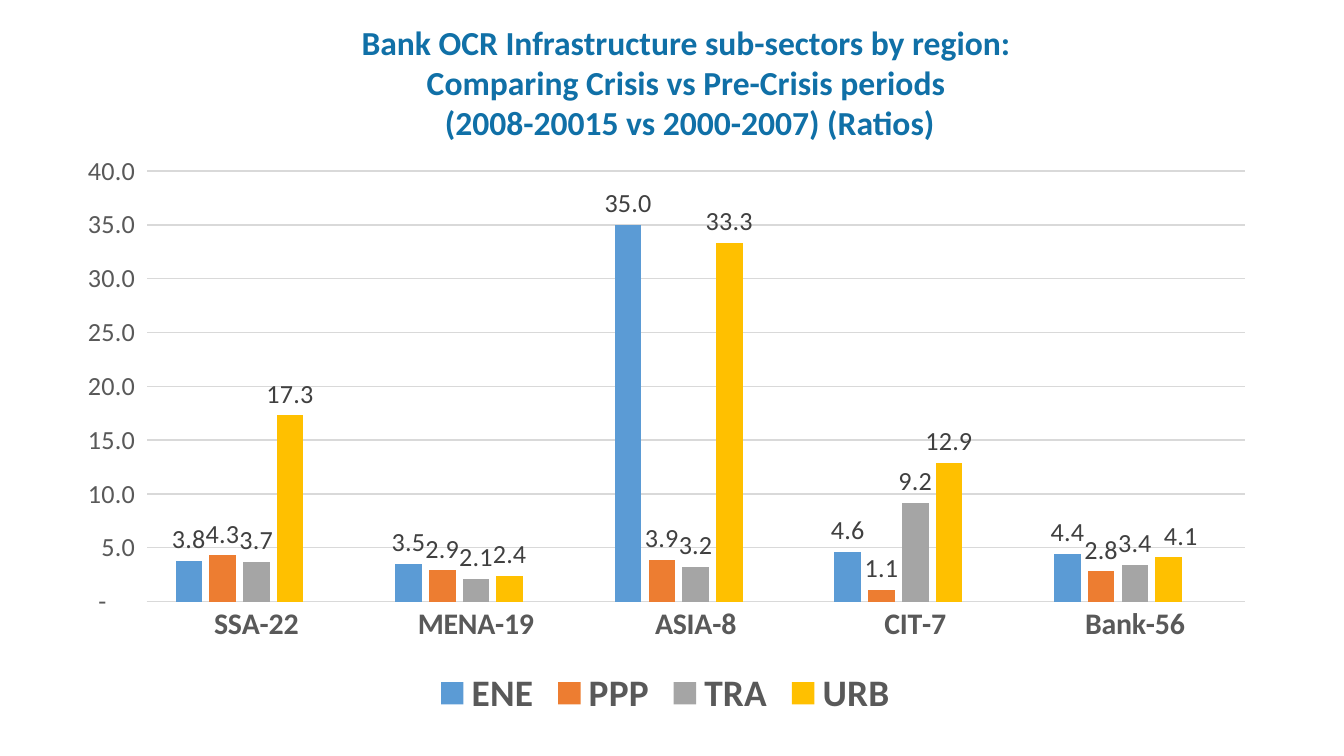
"""Build a slide comparing infrastructure sub-sector ratios by region."""
from lxml.etree import SubElement
from pptx import Presentation
from pptx.chart.data import CategoryChartData
from pptx.dml.color import RGBColor
from pptx.enum.chart import XL_CHART_TYPE, XL_LABEL_POSITION, XL_LEGEND_POSITION, XL_TICK_MARK
from pptx.enum.text import MSO_AUTO_SIZE, PP_ALIGN
from pptx.oxml import parse_xml
from pptx.oxml.ns import nsdecls, qn
from pptx.util import Pt

PX = 914400 / 134.4
FONT = "Calibri"
TITLE_BLUE = RGBColor(0x10, 0x70, 0xA7)
AXIS_GREY = RGBColor(0x59, 0x59, 0x59)
LABEL_GREY = RGBColor(0x40, 0x40, 0x40)
GRID_GREY = RGBColor(0xD9, 0xD9, 0xD9)
RATIO_FORMAT = '_-* #,##0.0_-;\\-* #,##0.0_-;_-* "-"??_-;'

REGIONS = ["SSA-22", "MENA-19", "ASIA-8", "CIT-7", "Bank-56"]
SECTORS = [
    ("ENE", [3.8, 3.5, 35, 4.6, 4.4], RGBColor(0x5B, 0x9B, 0xD5)),
    ("PPP", [4.3, 2.9, 3.9, 1.1, 2.8], RGBColor(0xED, 0x7D, 0x31)),
    ("TRA", [3.7, 2.1, 3.2, 9.2, 3.4], RGBColor(0xA5, 0xA5, 0xA5)),
    ("URB", [17.3, 2.4, 33.3, 12.9, 4.1], RGBColor(0xFF, 0xC0, 0x00)),
    ("Series 5", [None] * 5, RGBColor(0x44, 0x72, 0xC4)),
]
TITLE_LINES = [
    "Bank OCR Infrastructure sub-sectors by region: ",
    "Comparing Crisis vs Pre-Crisis periods ",
    "(2008-20015 vs 2000-2007) (Ratios)",
]


def px(*lengths):
    return [round(length * PX) for length in lengths]


def style(font, size, color, bold=False):
    font.name = FONT
    font.size = Pt(size)
    font.bold = bold
    font.color.rgb = color


presentation = Presentation()
presentation.slide_width, presentation.slide_height = px(1344, 756)
slide = presentation.slides.add_slide(presentation.slide_layouts[6])

ratios = CategoryChartData(number_format=RATIO_FORMAT)
ratios.categories = REGIONS
for sector, values, color in SECTORS:
    ratios.add_series(sector, values)
chart = slide.shapes.add_chart(
    XL_CHART_TYPE.COLUMN_CLUSTERED, *px(62, 142, 1207, 582), ratios
).chart
chart.has_title = False
style(chart.font, 10, RGBColor(0, 0, 0))

columns = chart.plots[0]
columns.gap_width = 219
columns.overlap = -27
columns.vary_by_categories = False
for series, (sector, values, color) in zip(columns.series, SECTORS):
    series.format.fill.solid()
    series.format.fill.fore_color.rgb = color
    series.invert_if_negative = False
    labels = series.data_labels
    labels.show_value = True
    labels.number_format = RATIO_FORMAT
    labels.number_format_is_linked = False
    labels.position = XL_LABEL_POSITION.OUTSIDE_END
    style(labels.font, 14, LABEL_GREY)

urban = columns.series[3]
shifted = urban.points[4].data_label
style(shifted.font, 14, LABEL_GREY)
shifted.position = XL_LABEL_POSITION.OUTSIDE_END
urban.data_labels._element.find(qn("c:dLbl")).find(qn("c:idx")).addnext(parse_xml(
    f'<c:layout {nsdecls("c")}><c:manualLayout>'
    '<c:x val="0.01"/><c:y val="0"/></c:manualLayout></c:layout>'
))

plot_area = chart._chartSpace.chart.plotArea
for old_layout in plot_area.findall(qn("c:layout")):
    plot_area.remove(old_layout)
plot_area.insert(0, parse_xml(
    f'<c:layout {nsdecls("c")}><c:manualLayout><c:layoutTarget val="inner"/>'
    '<c:xMode val="edge"/><c:yMode val="edge"/><c:x val="0.07"/><c:y val="0.05"/>'
    '<c:w val="0.91"/><c:h val="0.74"/></c:manualLayout></c:layout>'
))

region_axis = chart.category_axis
ratio_axis = chart.value_axis
for axis in (region_axis, ratio_axis):
    axis.major_tick_mark = XL_TICK_MARK.NONE
    axis.minor_tick_mark = XL_TICK_MARK.NONE
style(region_axis.tick_labels.font, 16, AXIS_GREY, bold=True)
style(ratio_axis.tick_labels.font, 14, AXIS_GREY)
ratio_axis.tick_labels.number_format = RATIO_FORMAT
ratio_axis.tick_labels.number_format_is_linked = False
ratio_axis.minimum_scale, ratio_axis.maximum_scale = 0, 40
ratio_axis.major_unit = 5
ratio_axis.format.line.fill.background()
for line in (region_axis.format.line, ratio_axis.major_gridlines.format.line):
    line.color.rgb = GRID_GREY
    line.width = Pt(0.75)

chart.has_legend = True
legend = chart.legend
legend.position = XL_LEGEND_POSITION.BOTTOM
legend.include_in_layout = False
style(legend.font, 20, AXIS_GREY, bold=True)
hidden_entry = parse_xml(f'<c:legendEntry {nsdecls("c")}/>')
SubElement(hidden_entry, qn("c:idx"), val="4")
SubElement(hidden_entry, qn("c:delete"), val="1")
legend._element.find(qn("c:legendPos")).addnext(hidden_entry)

heading = slide.shapes.add_textbox(*px(223, 15, 934, 136)).text_frame
heading.word_wrap = True
heading.auto_size = MSO_AUTO_SIZE.SHAPE_TO_FIT_TEXT
for index, words in enumerate(TITLE_LINES):
    paragraph = heading.add_paragraph() if index else heading.paragraphs[0]
    paragraph.alignment = PP_ALIGN.CENTER
    run = paragraph.add_run()
    run.text = words
    style(run.font, 18, TITLE_BLUE, bold=True)

presentation.save("out.pptx")
